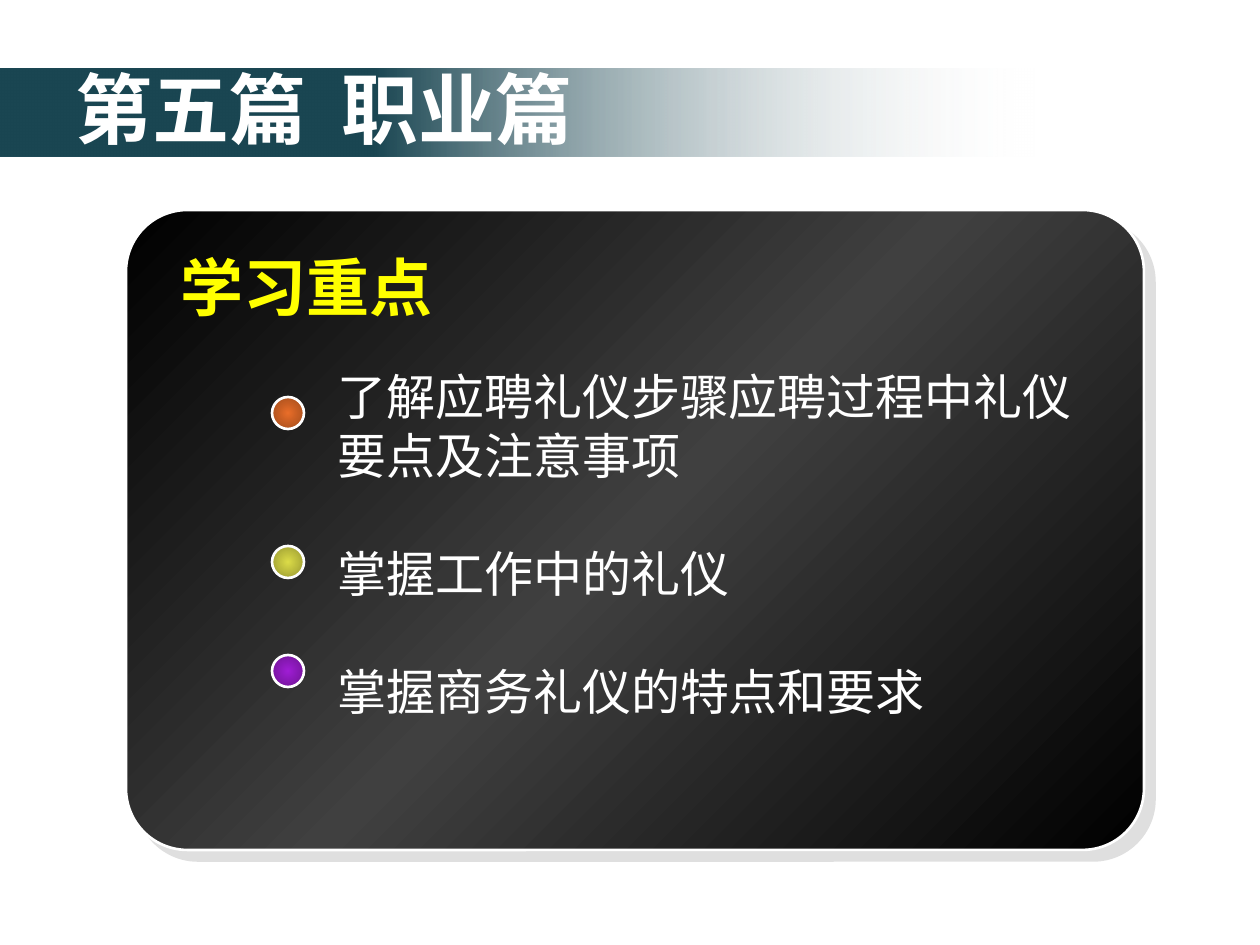
"""Build the chapter five slide with its learning goals card."""
from dataclasses import dataclass

from lxml.etree import SubElement
from pptx import Presentation
from pptx.dml.color import RGBColor
from pptx.enum.shapes import MSO_SHAPE
from pptx.enum.text import MSO_ANCHOR, MSO_AUTO_SIZE, PP_ALIGN
from pptx.oxml import parse_xml
from pptx.oxml.ns import nsdecls, qn
from pptx.util import Pt

PX = 7257


@dataclass(frozen=True)
class Theme:
    white: str = "FFFFFF"
    yellow: str = "FFFF00"
    heading_shadow: str = "808080"
    card_shadow: str = "C0C0C0"
    bar: tuple = ((0, "F8F8F8", 0), (64, "1A4652", 100))
    card: tuple = ((0, "000000", 100), (50, "404040", 100), (100, "000000", 100))
    dots: tuple = (("E96E29", "9B491B"), ("DCDC48", "939330"), ("A01DD5", "6B138E"))
    latin: str = "Arial"
    chinese: str = "Noto Sans CJK SC"
    title_size: int = 44
    heading_size: int = 36
    body_size: int = 28
    outline: float = 1.5


theme = Theme()


def add_gradient_shape(kind, box, stops, angle=None, outlined=True):
    shape = slide.shapes.add_shape(kind, *[length * PX for length in box])
    shape.shadow.inherit = False
    direction = (
        '<a:path path="circle"><a:fillToRect l="50000" t="50000" r="50000" b="50000"/></a:path>'
        if angle is None else f'<a:lin ang="{angle * 60000}" scaled="0"/>'
    )
    stop_list = "".join(
        f'<a:gs pos="{position * 1000}"><a:srgbClr val="{color}">'
        f'<a:alpha val="{alpha * 1000}"/></a:srgbClr></a:gs>'
        for position, color, alpha in stops
    )
    fill = parse_xml(
        f'<a:gradFill {nsdecls("a")} rotWithShape="1"><a:gsLst>{stop_list}</a:gsLst>'
        f'{direction}</a:gradFill>'
    )
    shape._element.spPr.find(qn("a:prstGeom")).addnext(fill)
    if outlined:
        shape.line.color.rgb = RGBColor.from_string(theme.white)
        shape.line.width = Pt(theme.outline)
    else:
        shape.line.fill.background()
    return shape


def write_text(shape, text, box, size, color=theme.white, bold=False, font=theme.latin,
               east_asian=None, anchor=MSO_ANCHOR.TOP, gap=0, shadow=None):
    shape.left, shape.top, shape.width, shape.height = [length * PX for length in box]
    frame = shape.text_frame
    frame.text = text
    frame.word_wrap = True
    frame.auto_size = MSO_AUTO_SIZE.NONE
    frame.vertical_anchor = anchor
    for index, paragraph in enumerate(frame.paragraphs):
        properties = paragraph._p.get_or_add_pPr()
        properties.set("marL", "0")
        properties.set("indent", "0")
        SubElement(properties, qn("a:buNone"))
        paragraph.alignment = PP_ALIGN.LEFT
        paragraph.space_before = Pt(gap if index else 0)
        for run in paragraph.runs:
            run.font.size = Pt(size)
            run.font.bold = bold
            run.font.color.rgb = RGBColor.from_string(color)
            if shadow:
                run.font._element.append(parse_xml(
                    f'<a:effectLst {nsdecls("a")}><a:outerShdw dist="35921" dir="2700000">'
                    f'<a:srgbClr val="{shadow}"/></a:outerShdw></a:effectLst>'
                ))
            run.font.name = font
            if east_asian:
                SubElement(run.font._element, qn("a:ea")).set("typeface", east_asian)


presentation = Presentation()
presentation.slide_width = 1260 * PX
presentation.slide_height = 945 * PX
slide = presentation.slides.add_slide(presentation.slide_layouts[1])
title, goals = slide.placeholders

bar = add_gradient_shape(MSO_SHAPE.RECTANGLE, (0, 69, 1036, 88), theme.bar, 180, False)
card = add_gradient_shape(MSO_SHAPE.ROUNDED_RECTANGLE, (126, 210, 1018, 640), theme.card, 45)
card.adjustments[0] = 0.096
card_effects = card._element.spPr.find(qn("a:effectLst"))
card_effects.append(parse_xml(
    f'<a:outerShdw {nsdecls("a")} dist="107950" dir="2700000" algn="ctr" rotWithShape="0">'
    f'<a:srgbClr val="{theme.card_shadow}"><a:alpha val="50000"/></a:srgbClr></a:outerShdw>'
))
for top, (center, edge) in zip((397, 546, 655), theme.dots):
    add_gradient_shape(MSO_SHAPE.OVAL, (272, top, 32, 32), ((0, center, 100), (100, edge, 100)))

slide.shapes._spTree.extend([title._element, goals._element])
write_text(title, "第五篇  职业篇", (63, 55, 777, 127), theme.title_size, bold=True,
           font=theme.chinese, east_asian=theme.chinese)
write_text(goals, "了解应聘礼仪步骤应聘过程中礼仪要点及注意事项\n掌握工作中的礼仪\n掌握商务礼仪的特点和要求",
           (325, 360, 779, 369), theme.body_size, gap=34)
heading = slide.shapes.add_textbox(0, 0, PX, PX)
write_text(heading, "学习重点", (168, 242, 284, 88), theme.heading_size, color=theme.yellow,
           bold=True, shadow=theme.heading_shadow)

presentation.save("out.pptx")
